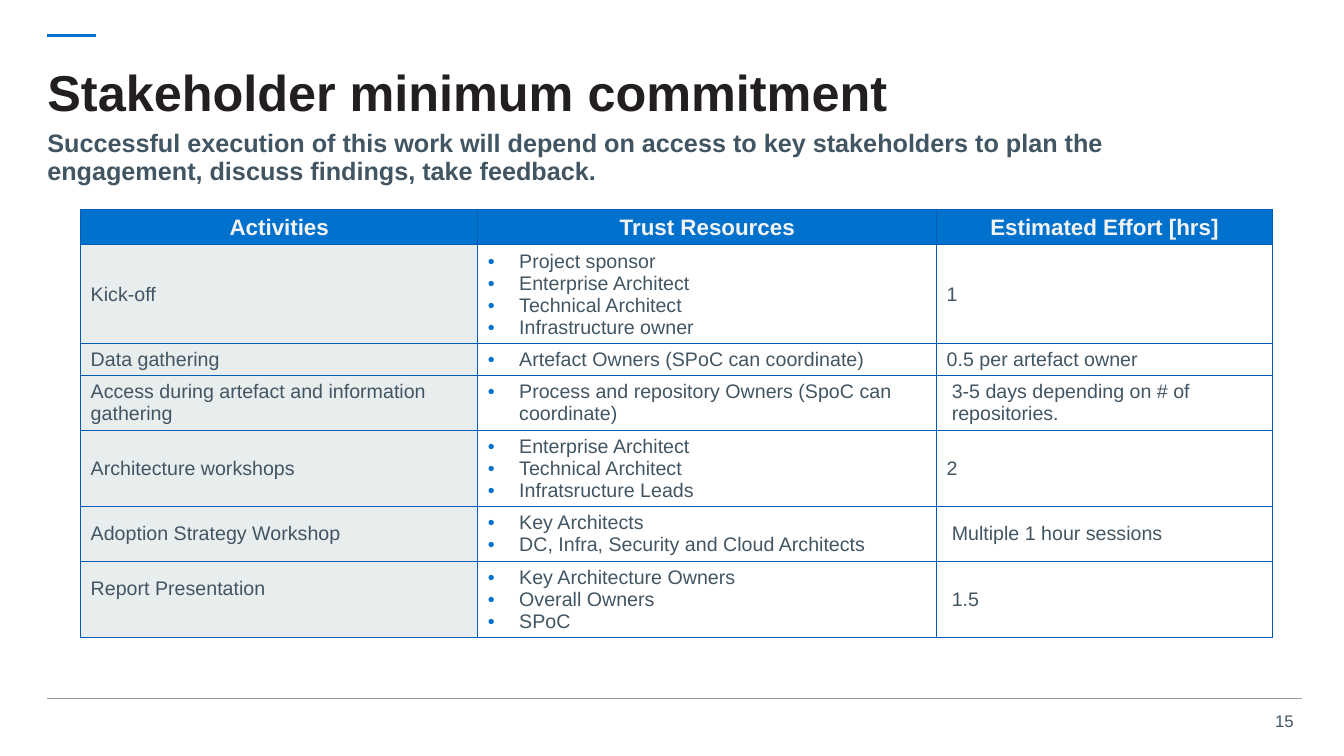
from dataclasses import dataclass

from lxml import etree
from pptx import Presentation
from pptx import util as u
from pptx.dml.color import RGBColor
from pptx.enum import shapes, text
from pptx.oxml import ns

HEADING = "Stakeholder minimum commitment"
SUMMARY = ("Successful execution of this work will depend on access to key stakeholders "
           "to plan the engagement, discuss findings, take feedback.")
PAGE = "15"
HEADERS = ("Activities", "Trust Resources", "Estimated Effort [hrs]")
# activity, resources, effort, effort indent, row height
ACTIVITIES = [
    ("Kick-off",
     ["Project sponsor", "Enterprise Architect", "Technical Architect", "Infrastructure owner"],
     "1", 0, 0.98),
    ("Data gathering", ["Artefact Owners (SPoC can coordinate)"],
     "0.5 per artefact owner", 0, 0.32),
    ("Access during artefact and information gathering",
     ["Process and repository Owners (SpoC can coordinate)"],
     "3-5 days depending on # of repositories.", 0.05, 0.54),
    ("Architecture workshops",
     ["Enterprise Architect", "Technical Architect", "Infratsructure Leads"], "2", 0, 0.76),
    ("Adoption Strategy Workshop",
     ["Key Architects", "DC, Infra, Security and Cloud Architects"],
     "Multiple 1 hour sessions", 0.05, 0.54),
    ("Report Presentation",
     ["Key Architecture Owners", "Overall Owners", "SPoC"], "1.5", 0.05, 0.76),
]
COLUMN_WIDTHS = (3.94, 4.55, 3.33)
HEADER_HEIGHT = 0.35
BULLET_INDENT = 0.31
RAISED_BOTTOM = 0.27


@dataclass(frozen=True)
class Theme:
    font: str = "Arial"
    ink: str = "231F20"
    body: str = "425563"
    accent: str = "0072CE"
    border: str = "005EB8"
    rule: str = "919EA8"
    pale: str = "E8EDEE"
    white: str = "FFFFFF"
    header_text: str = "F3F3F3"
    title_size: int = 36
    summary_size: int = 18
    header_size: int = 16
    cell_size: int = 14
    page_size: int = 12


THEME = Theme()


def style(paragraph, size, color, bold=False, align=text.PP_ALIGN.LEFT, spacing=None):
    """Format one paragraph."""
    font = paragraph.font
    font.name, font.size, font.bold = THEME.font, u.Pt(size), bold
    font.color.rgb = RGBColor.from_string(color)
    paragraph.alignment = align
    if spacing:
        paragraph.line_spacing = spacing


def place(shape, left, top, width, height):
    """Set the position and size of a shape."""
    shape.left, shape.top = u.Inches(left), u.Inches(top)
    shape.width, shape.height = u.Inches(width), u.Inches(height)


def fill_frame(frame, words, inset_x=0, inset_y=0, anchor=text.MSO_ANCHOR.TOP):
    """Put words in a wrapping frame and return its paragraph."""
    frame.word_wrap, frame.auto_size = True, text.MSO_AUTO_SIZE.NONE
    frame.vertical_anchor = anchor
    frame.margin_left = frame.margin_right = u.Inches(inset_x)
    frame.margin_top = frame.margin_bottom = u.Inches(inset_y)
    frame.text = words
    return frame.paragraphs[0]


def add_rule(slide, left, right, y, color, weight):
    """Draw a horizontal line without a shadow."""
    rule = slide.shapes.add_connector(shapes.MSO_CONNECTOR.STRAIGHT, u.Inches(left),
                                      u.Inches(y), u.Inches(right), u.Inches(y))
    rule.line.color.rgb = RGBColor.from_string(color)
    rule.line.width = u.Pt(weight)
    etree.SubElement(rule._element.spPr, ns.qn("a:effectLst"))


def indent(paragraph, left, bullet=False):
    """Indent a paragraph, with a coloured hanging bullet if asked."""
    properties = paragraph._p.get_or_add_pPr()
    properties.set("marL", str(u.Inches(left)))
    properties.set("indent", str(-u.Inches(left) if bullet else 0))
    if bullet:
        color = etree.SubElement(properties, ns.qn("a:buClr"))
        etree.SubElement(color, ns.qn("a:srgbClr"), val=THEME.accent)
        etree.SubElement(properties, ns.qn("a:buFont"), typeface=THEME.font)
        etree.SubElement(properties, ns.qn("a:buChar"), char="•")


def write_cell(cell, lines, fill, size=THEME.cell_size, color=THEME.body, **looks):
    """Fill a cell with bordered, centred lines of text."""
    properties = cell._tc.get_or_add_tcPr()
    for side in ("lnL", "lnR", "lnT", "lnB"):
        edge = etree.SubElement(properties, ns.qn(f"a:{side}"), w=str(u.Pt(0.75)))
        solid = etree.SubElement(edge, ns.qn("a:solidFill"))
        etree.SubElement(solid, ns.qn("a:srgbClr"), val=THEME.border)
    cell.fill.solid()
    cell.fill.fore_color.rgb = RGBColor.from_string(fill)
    cell.vertical_anchor = text.MSO_ANCHOR.MIDDLE
    cell.text = "\n".join(lines)
    for paragraph in cell.text_frame.paragraphs:
        style(paragraph, size, color, **looks)


def add_commitments(slide):
    """Build the table of activities, resources and effort."""
    heights = [HEADER_HEIGHT] + [activity[-1] for activity in ACTIVITIES]
    table = slide.shapes.add_table(
        len(heights), len(HEADERS), u.Inches(0.8), u.Inches(2.08),
        u.Inches(sum(COLUMN_WIDTHS)), u.Inches(sum(heights))).table
    for column, width in zip(table.columns, COLUMN_WIDTHS):
        column.width = u.Inches(width)
    for row, height in zip(table.rows, heights):
        row.height = u.Inches(height)
    for cell, header in zip(table.rows[0].cells, HEADERS):
        write_cell(cell, [header], THEME.accent, THEME.header_size, THEME.header_text,
                   bold=True, align=text.PP_ALIGN.CENTER)
    for number, (activity, resources, effort, inset, _) in enumerate(ACTIVITIES, 1):
        activity_cell, resource_cell, effort_cell = table.rows[number].cells
        write_cell(activity_cell, [activity], THEME.pale)
        write_cell(resource_cell, resources, THEME.white)
        write_cell(effort_cell, [effort], THEME.white)
        for paragraph in resource_cell.text_frame.paragraphs:
            indent(paragraph, BULLET_INDENT, bullet=True)
        indent(effort_cell.text_frame.paragraphs[0], inset)
    table.cell(len(ACTIVITIES), 0).margin_bottom = u.Inches(RAISED_BOTTOM)


def main():
    """Build and save the slide."""
    deck = Presentation()
    deck.slide_width, deck.slide_height = u.Inches(13.33), u.Inches(7.5)
    slide = deck.slides.add_slide(deck.slide_layouts[5])

    page = slide.shapes.add_textbox(*map(u.Inches, (12.52, 7, 0.41, 0.3)))
    style(fill_frame(page.text_frame, PAGE, 0.1, 0.05), THEME.page_size, THEME.body,
          align=text.PP_ALIGN.RIGHT)
    add_rule(slide, 0.47, 0.95, 0.35, THEME.accent, 2)
    add_rule(slide, 0.47, 12.91, 6.93, THEME.rule, 0.75)

    summary = slide.shapes.add_textbox(*map(u.Inches, (0.47, 1.29, 12.04, 0.63)))
    style(fill_frame(summary.text_frame, SUMMARY), THEME.summary_size, THEME.body,
          bold=True, spacing=0.92)
    heading = slide.shapes.title
    place(heading, 0.47, 0.47, 12.47, 0.95)
    style(fill_frame(heading.text_frame, HEADING, anchor=text.MSO_ANCHOR.MIDDLE),
          THEME.title_size, THEME.ink, bold=True, spacing=0.9)

    add_commitments(slide)
    deck.save("out.pptx")


if __name__ == "__main__":
    main()
